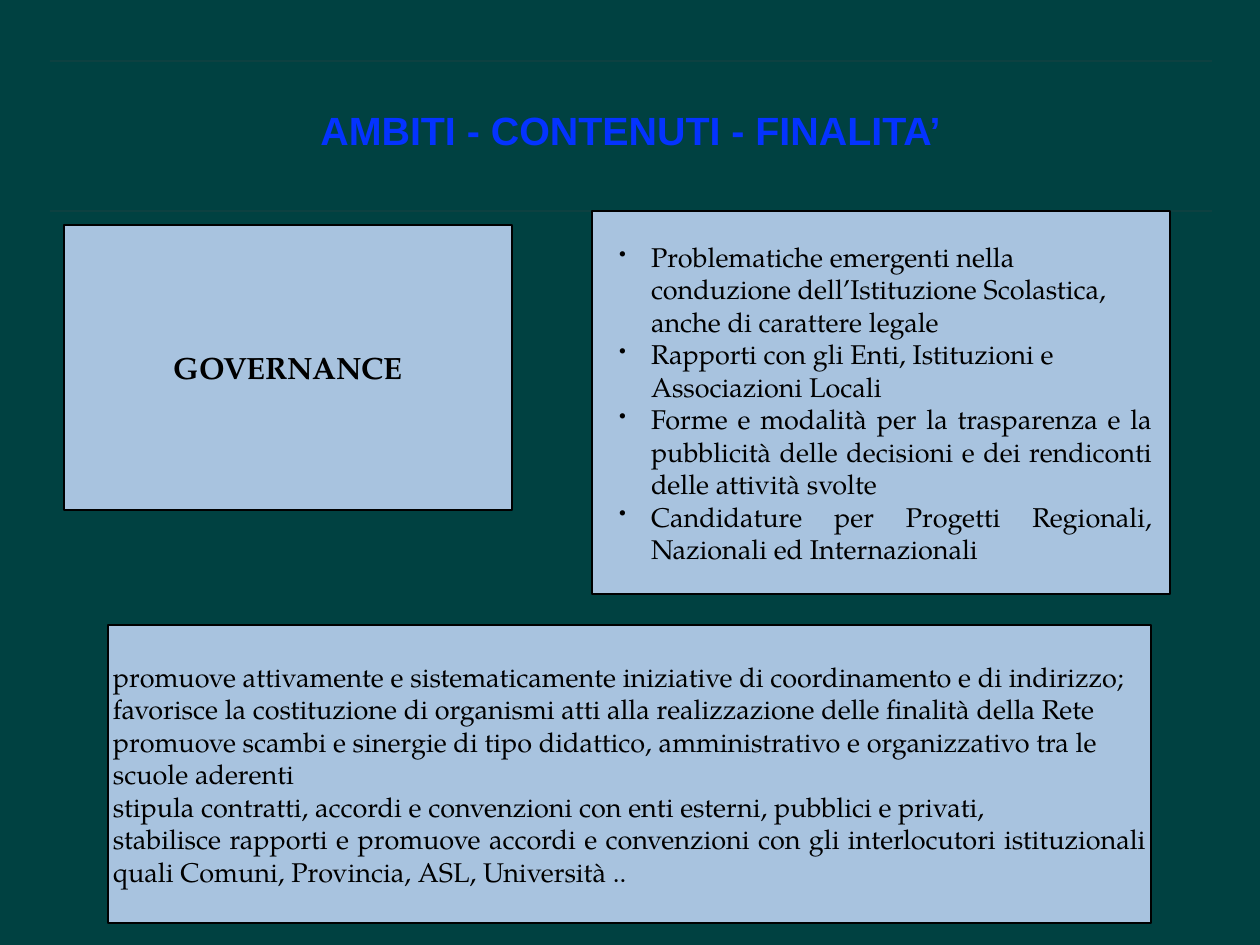
from lxml import etree
from pptx import Presentation
from pptx.dml.color import RGBColor
from pptx.enum.shapes import MSO_CONNECTOR, MSO_SHAPE
from pptx.enum.text import MSO_ANCHOR, PP_ALIGN
from pptx.oxml.ns import qn
from pptx.util import Pt

STRAIGHT = MSO_CONNECTOR.STRAIGHT
RECTANGLE = MSO_SHAPE.RECTANGLE
MIDDLE = MSO_ANCHOR.MIDDLE
LEFT, CENTER, JUSTIFY = PP_ALIGN.LEFT, PP_ALIGN.CENTER, PP_ALIGN.JUSTIFY

PX = 10320
INSET = 5
COLORS = {"background": "004141", "title": "0433FF", "panel": "A8C3DF",
          "ink": "000000", "rule": "444444"}
SERIF = "TeX Gyre Pagella"
TITLE_FONT = {"name": "Arial", "size": Pt(32), "bold": True}
HEADING_FONT = {"name": SERIF, "size": Pt(25), "bold": True}
BODY_FONT = {"name": SERIF, "size": Pt(22), "bold": False}

TOPICS = [
    ("Problematiche emergenti nella conduzione dell’Istituzione Scolastica, "
     "anche di carattere legale", LEFT),
    ("Rapporti con gli Enti, Istituzioni e Associazioni Locali", LEFT),
    ("Forme e modalità per la trasparenza e la pubblicità delle decisioni "
     "e dei rendiconti delle attività svolte", JUSTIFY),
    ("Candidature per Progetti Regionali, Nazionali ed Internazionali", JUSTIFY),
]
AIMS = [
    ("promuove attivamente e sistematicamente iniziative di coordinamento "
     "e di indirizzo;", LEFT),
    ("favorisce la costituzione di organismi atti alla realizzazione delle "
     "finalità della Rete", LEFT),
    ("promuove scambi e sinergie di tipo didattico, amministrativo e "
     "organizzativo tra le scuole aderenti", LEFT),
    ("stipula contratti, accordi e convenzioni con enti esterni, pubblici "
     "e privati,", JUSTIFY),
    ("stabilisce rapporti e promuove accordi e convenzioni con gli interlocutori "
     "istituzionali quali Comuni, Provincia, ASL, Università ..", JUSTIFY),
]


def color(name):
    return RGBColor.from_string(COLORS[name])


def scaled(*lengths):
    return [length * PX for length in lengths]


def add_bullet(paragraph):
    properties = paragraph._p.get_or_add_pPr()
    properties.set("marL", str(54 * PX))
    properties.set("indent", str(-32 * PX))
    etree.SubElement(properties, qn("a:buSzPct")).set("val", "75000")
    etree.SubElement(properties, qn("a:buChar")).set("char", "•")


def write(shape, lines, font, ink, bullets=False, top=INSET, right=INSET):
    """Fill a shape with (text, alignment) paragraphs; insets are in px."""
    frame = shape.text_frame
    layout = {"word_wrap": True, "vertical_anchor": MIDDLE,
              "margin_left": INSET * PX, "margin_bottom": INSET * PX,
              "margin_top": top * PX, "margin_right": right * PX}
    for name, value in layout.items():
        setattr(frame, name, value)
    for index, (text, alignment) in enumerate(lines):
        paragraph = frame.add_paragraph() if index else frame.paragraphs[0]
        paragraph.alignment = alignment
        if bullets:
            add_bullet(paragraph)
        run = paragraph.add_run()
        run.text = text
        for name, value in font.items():
            setattr(run.font, name, value)
        run.font.color.rgb = color(ink)


def add_rule(slide, left, y, width):
    rule = slide.shapes.add_connector(STRAIGHT, *scaled(left, y, left + width, y))
    rule.line.width = Pt(1)
    rule.line.color.rgb = color("rule")
    for fill in rule.line._ln.iter(qn("a:srgbClr")):
        etree.SubElement(fill, qn("a:alpha")).set("val", "30000")
    etree.SubElement(rule._element.spPr, qn("a:effectLst"))


def add_header(slide, left, top, width, height):
    """Place the title between two faint rules."""
    for y in (top + height, top):
        add_rule(slide, left, y, width)
    title = slide.shapes.add_textbox(*scaled(left, top - 16, width, 118))
    write(title, [("AMBITI - CONTENUTI - FINALITA’", CENTER)],
          TITLE_FONT, "title", top=57)


def add_panel(slide, box, lines, font, **options):
    panel = slide.shapes.add_shape(RECTANGLE, *scaled(*box))
    panel.shadow.inherit = False
    panel.fill.solid()
    panel.fill.fore_color.rgb = color("panel")
    panel.line.color.rgb = color("ink")
    panel.line.width = Pt(2)
    write(panel, lines, font, "ink", **options)


def main():
    presentation = Presentation()
    presentation.slide_width, presentation.slide_height = scaled(1260, 945)
    slide = presentation.slides.add_slide(presentation.slide_layouts[6])
    slide.background.fill.solid()
    slide.background.fill.fore_color.rgb = color("background")

    add_header(slide, 50, 61, 1162, 150)
    add_panel(slide, (64, 225, 448, 285), [("GOVERNANCE", CENTER)], HEADING_FONT)
    add_panel(slide, (592, 211, 578, 383), TOPICS, BODY_FONT, bullets=True, right=18)
    add_panel(slide, (108, 625, 1043, 298), AIMS, BODY_FONT)
    presentation.save("out.pptx")


if __name__ == "__main__":
    main()
